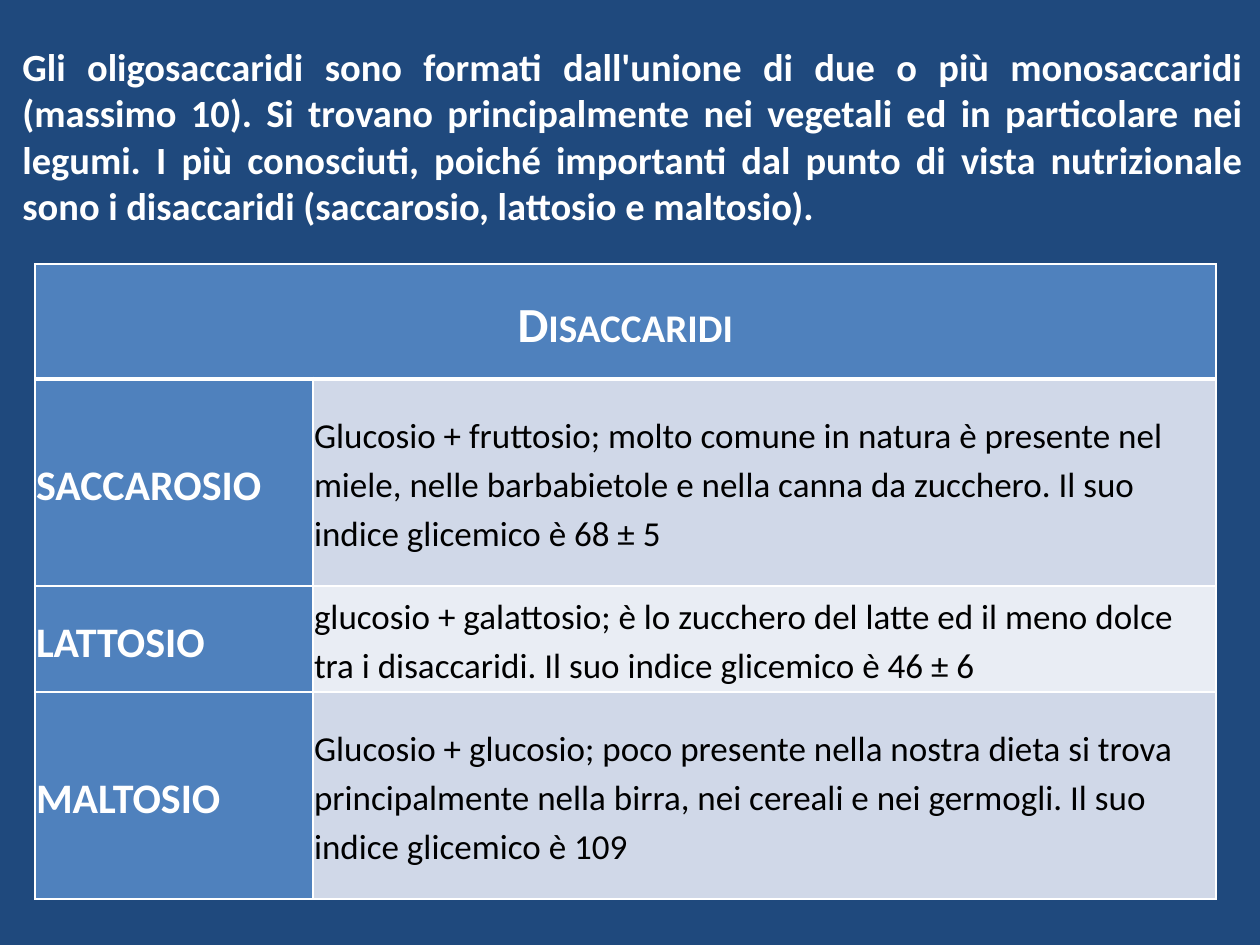
from lxml import etree
from pptx import Presentation, util as u
from pptx.dml.color import RGBColor
from pptx.enum import text
from pptx.oxml import ns

PX = 914400 // 126
WHITE, BLACK, NAVY, BLUE = "FFFFFF", "000000", "1F497D", "4F81BD"
BANDS = ["D0D8E8", "E9EDF4"]


def write(tf, content, size, color=WHITE, bold=True, align=text.PP_ALIGN.LEFT,
          spacing=None, after=0, small_caps=False):
    p = tf.paragraphs[0]
    p.alignment = align
    p.line_spacing = spacing
    p.space_after = u.Pt(after)
    r = p.add_run()
    r.text = content
    r.font.name, r.font.size, r.font.bold = "Calibri", u.Pt(size), bold
    r.font.color.rgb = RGBColor.from_string(color)
    if small_caps:
        r.font._element.set("cap", "small")


def style_cell(cell, fill, top=1, bottom=1):
    cell.vertical_anchor = text.MSO_ANCHOR.MIDDLE
    cell.margin_left = cell.margin_right = PX
    cell.margin_top = cell.margin_bottom = PX
    tc_pr = cell._tc.get_or_add_tcPr()
    for side, width in (("L", 1), ("R", 1), ("T", top), ("B", bottom)):
        ln = etree.SubElement(tc_pr, ns.qn(f"a:ln{side}"), w=str(u.Pt(width)))
        solid = etree.SubElement(ln, ns.qn("a:solidFill"))
        etree.SubElement(solid, ns.qn("a:srgbClr"), val=WHITE)
    cell.fill.solid()
    cell.fill.fore_color.rgb = RGBColor.from_string(fill)


prs = Presentation()
prs.slide_width, prs.slide_height = u.Inches(10), u.Inches(7.5)
s = prs.slides.add_slide(prs.slide_layouts[6])
s.background.fill.solid()
s.background.fill.fore_color.rgb = RGBColor.from_string(NAVY)

# Introduction
sp = s.shapes.add_textbox(10 * PX, 37 * PX, 1245 * PX, 199 * PX)
tf = sp.text_frame
tf.word_wrap = True
tf.auto_size = text.MSO_AUTO_SIZE.SHAPE_TO_FIT_TEXT
write(tf, "Gli oligosaccaridi sono formati dall'unione di due o più monosaccaridi "
      "(massimo 10). Si trovano principalmente nei vegetali ed in particolare nei "
      "legumi. I più conosciuti, poiché importanti dal punto di vista nutrizionale "
      "sono i disaccaridi (saccarosio, lattosio e maltosio).",
      22, align=text.PP_ALIGN.JUSTIFY)

# Table grid
col_widths = [278, 903]
row_heights = [115, 207, 106, 207]
table = s.shapes.add_table(len(row_heights), len(col_widths), 35 * PX, 264 * PX,
                           sum(col_widths) * PX, sum(row_heights) * PX).table
for col, width in zip(table.columns, col_widths):
    col.width = width * PX
for row, height in zip(table.rows, row_heights):
    row.height = height * PX

# Heading row
heading = table.cell(0, 0)
heading.merge(table.cell(0, 1))
for cell in table.rows[0].cells:
    style_cell(cell, BLUE, bottom=3)
write(heading.text_frame, "Disaccaridi", 28, align=text.PP_ALIGN.CENTER,
      spacing=1.15, small_caps=True)

# One row per disaccharide
sugars = [
    ("SACCAROSIO", "Glucosio + fruttosio; molto comune in natura è presente nel miele, "
     "nelle barbabietole e nella canna da zucchero. Il suo indice glicemico è 68 ± 5"),
    ("LATTOSIO", "glucosio + galattosio; è lo zucchero del latte ed il meno dolce "
     "tra i disaccaridi. Il suo indice glicemico è 46 ± 6"),
    ("MALTOSIO", "Glucosio + glucosio; poco presente nella nostra dieta si trova "
     "principalmente nella birra, nei cereali e nei germogli. Il suo indice "
     "glicemico è 109"),
]
for i, (name, description) in enumerate(sugars):
    name_cell, text_cell = table.rows[i + 1].cells
    top = 3 if i == 0 else 1
    style_cell(name_cell, BLUE, top=top)
    style_cell(text_cell, BANDS[i % 2], top=top)
    write(name_cell.text_frame, name, 24, spacing=1.15, after=10)
    write(text_cell.text_frame, description, 20, color=BLACK, bold=False,
          spacing=1.15, after=10)

prs.save("out.pptx")
